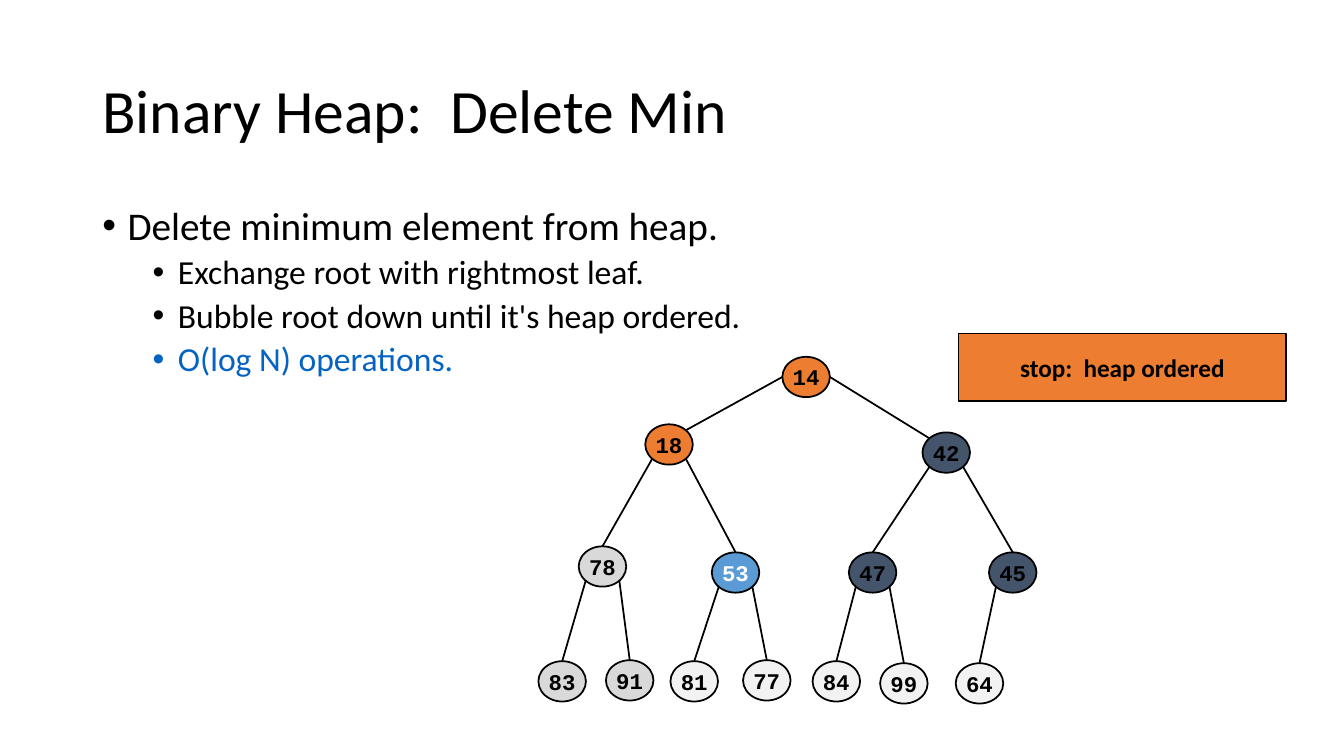
import math

import pptx
import pptx.dml.color
import pptx.enum.shapes
import pptx.enum.text
import pptx.oxml
import pptx.oxml.ns
import pptx.util

WIDTH, HEIGHT = pptx.util.Inches(13.333), pptx.util.Inches(7.5)
COLS, ROWS = 80, 45
COLORS = {
    "ink": "000000", "white": "FFFFFF", "link": "0563C1", "orange": "ED7D31",
    "blue": "5B9BD5", "slate": "44546A", "grey": "D9D9D9", "pale": "F2F2F2",
}
NODE_W, NODE_H = 2.83, 2.4
LABEL = {"name": "Courier New", "size": pptx.util.Pt(16), "bold": True}
NOTE = {"name": "Calibri", "size": pptx.util.Pt(18), "bold": True}
TITLE = {"name": "Calibri", "size": pptx.util.Pt(44)}
BODY = {"name": "Calibri"}
LEVELS = [
    {"size": 28, "margin": 0.25, "before": 10},
    {"size": 24, "margin": 0.75, "before": 5},
]
BULLETS = [
    (0, "Delete minimum element from heap.", "ink"),
    (1, "Exchange root with rightmost leaf.", "ink"),
    (1, "Bubble root down until it's heap ordered.", "ink"),
    (1, "O(log N) operations.", "link"),
]
HEAP = [
    ("14", 14.52, 0, "orange"),
    ("18", 6.36, 4.02, "orange"), ("42", 22.86, 4.5, "slate"),
    ("78", 2.4, 11.28, "grey"), ("53", 10.32, 11.64, "blue"),
    ("47", 18.48, 11.64, "slate"), ("45", 26.82, 11.64, "slate"),
    ("83", 0, 18.12, "grey"), ("91", 4.02, 18.06, "grey"),
    ("81", 7.86, 18.12, "pale"), ("77", 12.18, 18.06, "pale"),
    ("84", 16.32, 18.12, "pale"), ("99", 20.34, 18.24, "pale"),
    ("64", 24.84, 18.24, "pale"),
]


def place(*cells):
    units = (WIDTH / COLS, HEIGHT / ROWS)
    return [round(c * units[i % 2]) for i, c in enumerate(cells)]


def rgb(name):
    return pptx.dml.color.RGBColor.from_string(COLORS[name])


def apply(obj, values):
    for key, value in values.items():
        setattr(obj, key, value)


def add_run(p, text, font, color):
    r = p.add_run()
    r.text = text
    apply(r.font, font)
    r.font.color.rgb = rgb(color)


def outline(line):
    line.color.rgb = rgb("ink")
    line.width = pptx.util.Pt(1.25)


def add_box(s, kind, box, text, fill, font, color="ink"):
    sp = s.shapes.add_shape(kind, *place(*box))
    sp.shadow.inherit = False
    sp.fill.solid()
    sp.fill.fore_color.rgb = rgb(fill)
    outline(sp.line)
    tf = sp.text_frame
    apply(tf, {"word_wrap": False,
               "vertical_anchor": pptx.enum.text.MSO_ANCHOR.MIDDLE})
    p = tf.paragraphs[0]
    p.alignment = pptx.enum.text.PP_ALIGN.CENTER
    add_run(p, text, font, color)


def add_title(s, box, text):
    tf = s.shapes.add_textbox(*place(*box)).text_frame
    apply(tf, {"word_wrap": True,
               "vertical_anchor": pptx.enum.text.MSO_ANCHOR.MIDDLE})
    p = tf.paragraphs[0]
    p.line_spacing = 0.9
    add_run(p, text, TITLE, "ink")


def add_bullets(s, box, items):
    tf = s.shapes.add_textbox(*place(*box)).text_frame
    tf.word_wrap = True
    for i, (depth, text, color) in enumerate(items):
        level = LEVELS[depth]
        p = tf.add_paragraph() if i else tf.paragraphs[0]
        apply(p, {"level": depth, "line_spacing": 0.9,
                  "space_before": pptx.util.Pt(level["before"])})
        pPr = p._p.get_or_add_pPr()
        pPr.set("marL", str(pptx.util.Inches(level["margin"])))
        pPr.set("indent", str(pptx.util.Inches(-0.25)))
        ns = pptx.oxml.ns.nsdecls("a")
        for xml in (f'<a:buFont {ns} typeface="Arial"/>',
                    f'<a:buChar {ns} char="•"/>'):
            pPr.append(pptx.oxml.parse_xml(xml))
        add_run(p, text, {**BODY, "size": pptx.util.Pt(level["size"])}, color)


def add_edge(s, start, end):
    kind = pptx.enum.shapes.MSO_CONNECTOR.STRAIGHT
    line = s.shapes.add_connector(kind, *place(*start, *end))
    outline(line.line)
    effects = f'<a:effectLst {pptx.oxml.ns.nsdecls("a")}/>'
    line._element.spPr.append(pptx.oxml.parse_xml(effects))


def rim(node, angle):
    a = math.radians(angle)
    return (node[0] + NODE_W / 2 * (1 + math.cos(a)),
            node[1] + NODE_H / 2 * (1 + math.sin(a)))


def add_heap(s, box, heap):
    spots = [(box[0] + x, box[1] + y) for _, x, y, _ in heap]
    for child in range(1, len(heap)):
        parent, left = (child - 1) // 2, child % 2
        if parent == 0:
            leave, arrive = (180, -45) if left else (0, -135)
        else:
            leave, arrive = (135, -90) if left else (45, -90)
        add_edge(s, rim(spots[parent], leave), rim(spots[child], arrive))
    oval = pptx.enum.shapes.MSO_SHAPE.OVAL
    for spot, (key, _, _, fill) in zip(spots, heap):
        color = "white" if fill == "blue" else "ink"
        add_box(s, oval, (*spot, NODE_W, NODE_H), key, fill, LABEL, color)


def main():
    prs = pptx.Presentation()
    apply(prs, {"slide_width": WIDTH, "slide_height": HEIGHT})
    s = prs.slides.add_slide(prs.slide_layouts[6])
    add_title(s, (5.5, 2.4, 69, 8.7), "Binary Heap:  Delete Min")
    add_bullets(s, (5.5, 12, 69, 28.56), BULLETS)
    add_heap(s, (32.05, 21.24), HEAP)
    add_box(s, pptx.enum.shapes.MSO_SHAPE.RECTANGLE,
            (57.06, 19.86, 19.5, 4.02), "stop:  heap ordered", "orange", NOTE)
    prs.save("out.pptx")


if __name__ == "__main__":
    main()
